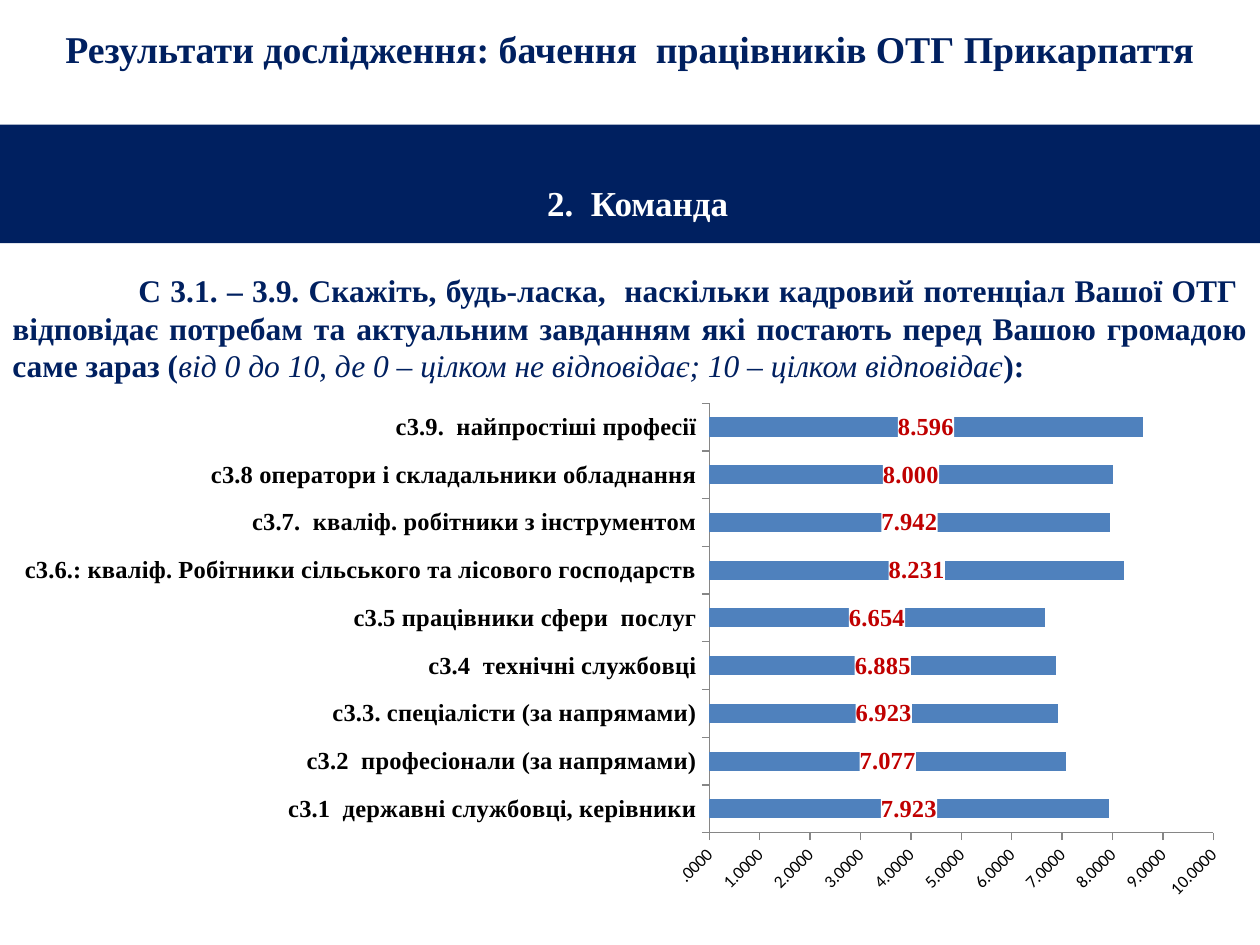
from lxml import etree
from pptx import Presentation
from pptx.chart.data import CategoryChartData
from pptx.dml.color import RGBColor
from pptx.enum.chart import XL_CHART_TYPE, XL_LABEL_POSITION, XL_TICK_MARK
from pptx.enum.shapes import MSO_SHAPE
from pptx.enum.text import MSO_ANCHOR, PP_ALIGN
from pptx.oxml import parse_xml
from pptx.oxml.ns import nsdecls, qn
from pptx.util import Inches, Pt

BAR = XL_CHART_TYPE.BAR_CLUSTERED
LABEL_CENTER = XL_LABEL_POSITION.CENTER
TICK_OUT, TICK_NONE = XL_TICK_MARK.OUTSIDE, XL_TICK_MARK.NONE
RECTANGLE = MSO_SHAPE.RECTANGLE
TOP, MIDDLE = MSO_ANCHOR.TOP, MSO_ANCHOR.MIDDLE
CENTER, JUSTIFY = PP_ALIGN.CENTER, PP_ALIGN.JUSTIFY

SERIF, SANS = "Times New Roman", "Calibri"
COLORS = {"navy": "002060", "white": "FFFFFF", "black": "000000",
          "bar": "4F81BD", "value": "C00000", "axis": "868686"}

SCORES = [
    ("c3.1  державні службовці, керівники", 7.923),
    ("c3.2  професіонали (за напрямами)", 7.077),
    ("c3.3. спеціалісти (за напрямами)", 6.923),
    ("c3.4  технічні службовці", 6.885),
    ("c3.5 працівники сфери  послуг", 6.654),
    ("c3.6.: кваліф. Робітники сільського та лісового господарств", 8.231),
    ("c3.7.  кваліф. робітники з інструментом", 7.942),
    ("c3.8 оператори і складальники обладнання", 8.000),
    ("c3.9.  найпростіші професії", 8.596),
]
QUESTION = [
    ("\tС 3.1. – 3.9. Скажіть, будь-ласка,  наскільки кадровий потенціал Вашої ОТГ  "
     "відповідає потребам та актуальним завданням які постають перед Вашою громадою "
     "саме зараз (", False),
    ("від 0 до 10, де 0 – цілком не відповідає; 10 – цілком відповідає", True),
    ("): ", False),
]


def rgb(name):
    return RGBColor.from_string(COLORS[name])


def style_font(font, size, color, face=SERIF, bold=True, italic=False):
    font.size, font.name = Pt(size), face
    font.bold, font.italic = bold, italic
    font.color.rgb = rgb(color)


def write(frame, runs, size, color, align, anchor):
    """Fill a frame with one paragraph of (text, is_note) runs; notes are italic."""
    frame.word_wrap = True
    frame.vertical_anchor = anchor
    paragraph = frame.paragraphs[0]
    paragraph.alignment = align
    for text, is_note in runs:
        run = paragraph.add_run()
        run.text = text
        style_font(run.font, size, color, bold=not is_note, italic=is_note)
    return paragraph


def add_text(slide, box, runs, size, align, anchor):
    frame = slide.shapes.add_textbox(*map(Inches, box)).text_frame
    return write(frame, runs, size, "navy", align, anchor)


def add_tab_stop(paragraph, position):
    tabs = etree.SubElement(paragraph._p.get_or_add_pPr(), qn("a:tabLst"))
    etree.SubElement(tabs, qn("a:tab"), pos=str(Inches(position)), algn="l")


def add_banner(slide, box, text):
    banner = slide.shapes.add_shape(RECTANGLE, *map(Inches, box))
    banner.shadow.inherit = False
    banner.fill.solid()
    banner.fill.fore_color.rgb = rgb("navy")
    banner.line.fill.background()
    frame = banner.text_frame
    frame.margin_top = Inches(0.45)
    frame.margin_left = Inches(0.22)
    write(frame, [(text, False)], 20, "white", CENTER, TOP)


def style_axis(axis, size, face, bold):
    axis.has_major_gridlines = False
    axis.major_tick_mark, axis.minor_tick_mark = TICK_OUT, TICK_NONE
    axis.format.line.color.rgb = rgb("axis")
    axis.format.line.width = Pt(0.75)
    style_font(axis.tick_labels.font, size, "black", face, bold)


def set_plot_area(chart, chart_box, plot_box):
    """Place the inner plot area; both boxes are in slide inches."""
    left, top, width, height = chart_box
    x, y, w, h = plot_box
    settings = {"layoutTarget": "inner", "xMode": "edge", "yMode": "edge",
                "x": (x - left) / width, "y": (y - top) / height,
                "w": w / width, "h": h / height}
    plot_area = chart._chartSpace.chart.plotArea
    for old in plot_area.findall(qn("c:layout")):
        plot_area.remove(old)
    layout = parse_xml(f"<c:layout {nsdecls('c')}><c:manualLayout/></c:layout>")
    for tag, value in settings.items():
        etree.SubElement(layout[0], qn(f"c:{tag}")).set("val", str(value))
    plot_area.insert(0, layout)


def label_values(plot):
    plot.has_data_labels = True
    labels = plot.data_labels
    labels.show_value = True
    labels.position = LABEL_CENTER
    labels.number_format, labels.number_format_is_linked = "####.000", False
    style_font(labels.font, 14, "value")
    background = parse_xml(
        f"<c:spPr {nsdecls('c', 'a')}><a:solidFill>"
        f"<a:srgbClr val=\"{COLORS['white']}\"/></a:solidFill></c:spPr>")
    labels._element.find(qn("c:txPr")).addprevious(background)


def add_score_chart(slide, box, plot_box):
    data = CategoryChartData()
    data.categories = [name for name, _ in SCORES]
    data.add_series("Series 1", [score for _, score in SCORES])
    chart = slide.shapes.add_chart(BAR, *map(Inches, box), data).chart
    chart.has_legend = chart.has_title = False
    style_font(chart.font, 10, "black", SANS, bold=False)
    set_plot_area(chart, box, plot_box)

    plot = chart.plots[0]
    plot.gap_width = 150
    plot.vary_by_categories = False
    bars = plot.series[0].format.fill
    bars.solid()
    bars.fore_color.rgb = rgb("bar")
    label_values(plot)

    style_axis(chart.category_axis, 14, SERIF, True)
    scale = chart.value_axis
    style_axis(scale, 10, SANS, False)
    scale.minimum_scale, scale.maximum_scale, scale.major_unit = 0, 10, 1
    scale.tick_labels.number_format = "####.0000"
    scale.tick_labels.number_format_is_linked = False
    scale._element.find(qn("c:txPr")).find(qn("a:bodyPr")).set("rot", "-2700000")


def main():
    prs = Presentation()
    prs.slide_width, prs.slide_height = Inches(10), Inches(7.5)
    slide = prs.slides.add_slide(prs.slide_layouts[6])

    title = "Результати дослідження: бачення  працівників ОТГ Прикарпаття"
    add_text(slide, (0, 0.01, 10, 0.75), [(title, False)], 21.6, CENTER, MIDDLE)
    add_banner(slide, (0, 0.99, 10, 0.94), "2.  Команда")
    question = add_text(slide, (0, 2.1, 10, 5.25), QUESTION, 18, JUSTIFY, TOP)
    add_tab_stop(question, 1)
    add_score_chart(slide, (0, 3.12, 9.88, 4.09), (5.63, 3.2, 4, 3.41))

    prs.save("out.pptx")


if __name__ == "__main__":
    main()
